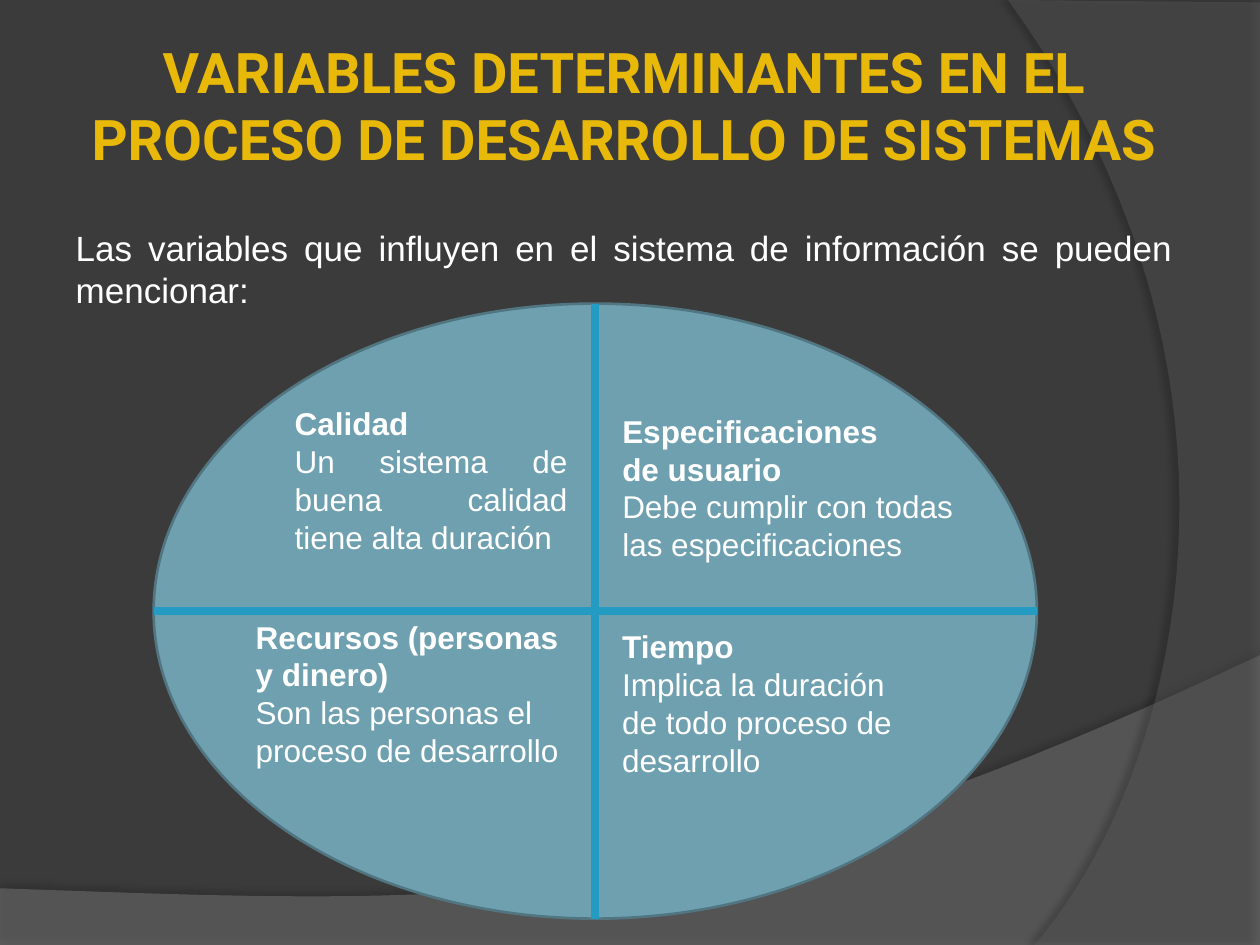
from lxml import etree
from pptx import Presentation
from pptx.dml.color import RGBColor
from pptx.enum.shapes import MSO_CONNECTOR, MSO_SHAPE
from pptx.enum.text import MSO_ANCHOR, MSO_AUTO_SIZE, PP_ALIGN
from pptx.oxml.ns import qn
from pptx.util import Pt

STRAIGHT = MSO_CONNECTOR.STRAIGHT
OVAL = MSO_SHAPE.OVAL
MIDDLE = MSO_ANCHOR.MIDDLE
NO_FIT = MSO_AUTO_SIZE.NONE
LEFT, CENTER, JUSTIFY = PP_ALIGN.LEFT, PP_ALIGN.CENTER, PP_ALIGN.JUSTIFY

WIDTH, HEIGHT = 720, 540
CURVE_STEPS = 40
WHITE = "FFFFFF"
OVAL_LEFT, OVAL_TOP, OVAL_WIDTH, OVAL_HEIGHT = 87.8, 173.5, 504.7, 351.4

QUADRANTS = [
    (161.3, 227.5, 170, 116.6, "Calidad",
     "Un sistema de buena calidad tiene alta duración", JUSTIFY),
    (348.5, 231.8, 209.5, 94.3, "Especificaciones\vde usuario",
     "Debe cumplir con todas las especificaciones", LEFT),
    (139, 349.4, 203.8, 116.6, "Recursos (personas\vy dinero)",
     "Son las personas el proceso de desarrollo", LEFT),
    (348.5, 355, 187.2, 116.6, "Tiempo",
     "Implica la duración de todo proceso de desarrollo", LEFT),
]


def color(value):
    return RGBColor.from_string(value)


def place(shape, left, top, width, height):
    shape.left, shape.top = Pt(left), Pt(top)
    shape.width, shape.height = Pt(width), Pt(height)


def format_runs(para, font, size, value, bold=False):
    for span in para.runs:
        span.font.name = font
        span.font.size = Pt(size)
        span.font.bold = bold
        span.font.color.rgb = color(value)


def add_alpha(color_element, percent):
    etree.SubElement(color_element, qn("a:alpha"), val=str(percent * 1000))


def curve_points(start, control_1, control_2, end):
    points = []
    for step in range(1, CURVE_STEPS + 1):
        t = step / CURVE_STEPS
        weights = ((1 - t) ** 3, 3 * t * (1 - t) ** 2, 3 * t * t * (1 - t), t ** 3)
        anchors = (start, control_1, control_2, end)
        points.append(tuple(sum(w * p[axis] for w, p in zip(weights, anchors))
                            for axis in (0, 1)))
    return points


def add_wave(page, depth, corners, curve, fill, alpha, shadow_alpha, distance, angle):
    outline = [(Pt(x), Pt(y)) for x, y in corners + curve_points(corners[-1], *curve)]
    builder = page.shapes.build_freeform(*outline[0], scale=1.0)
    builder.add_line_segments(outline[1:], close=True)
    wave = builder.convert_to_shape()
    wave.fill.solid()
    wave.fill.fore_color.rgb = color(fill)
    wave.line.fill.background()
    wave.shadow.inherit = False
    properties = wave.element.spPr
    add_alpha(properties.find(qn("a:solidFill")).find(qn("a:srgbClr")), alpha)
    shadow = etree.SubElement(
        properties.find(qn("a:effectLst")), qn("a:outerShdw"), blurRad=str(Pt(4)),
        dist=str(Pt(distance)), dir=str(angle * 60000), algn="ctr", rotWithShape="0")
    add_alpha(etree.SubElement(shadow, qn("a:srgbClr"), val="000000"), shadow_alpha)
    tree = wave.element.getparent()
    tree.insert(2 + depth, wave.element)


def add_title(page, text):
    title = page.shapes.title
    place(title, 36, 15, 641.5, 90)
    frame = title.text_frame
    frame.text = text
    frame.auto_size = NO_FIT
    frame.vertical_anchor = MIDDLE
    frame.margin_left = frame.margin_right = Pt(3.6)
    frame.margin_top = frame.margin_bottom = Pt(3.6)
    para = frame.paragraphs[0]
    para.alignment = CENTER
    format_runs(para, "Roboto", 32, "E9B90A", True)


def add_introduction(page, text):
    body = page.placeholders[1]
    place(body, 36, 126, 641.5, 65)
    frame = body.text_frame
    frame.text = text
    frame.auto_size = NO_FIT
    para = frame.paragraphs[0]
    para.alignment = JUSTIFY
    para.space_before = Pt(4)
    format_runs(para, "Arial", 20, WHITE)
    properties = para._p.get_or_add_pPr()
    properties.set("marL", "0")
    properties.set("indent", "0")
    etree.SubElement(properties, qn("a:buNone"))


def add_oval(group):
    oval = group.shapes.add_shape(OVAL, Pt(OVAL_LEFT), Pt(OVAL_TOP),
                                  Pt(OVAL_WIDTH), Pt(OVAL_HEIGHT))
    oval.shadow.inherit = False
    oval.fill.solid()
    oval.fill.fore_color.rgb = color("6EA0B0")
    oval.line.color.rgb = color("517682")
    oval.line.width = Pt(1.5)


def add_divider(group, *ends):
    divider = group.shapes.add_connector(STRAIGHT, *(Pt(value) for value in ends))
    divider.line.color.rgb = color("239BC2")
    divider.line.width = Pt(4.5)
    etree.SubElement(divider.element.spPr, qn("a:effectLst"))


def add_quadrant(group, left, top, width, height, heading, detail, alignment):
    box = group.shapes.add_textbox(Pt(left), Pt(top), Pt(width), Pt(height))
    frame = box.text_frame
    frame.word_wrap = True
    frame.text = heading
    format_runs(frame.paragraphs[0], "Arial", 18, WHITE, True)
    para = frame.add_paragraph()
    para.text = detail
    para.alignment = alignment
    format_runs(para, "Arial", 18, WHITE)


def main():
    deck = Presentation()
    deck.slide_width, deck.slide_height = Pt(WIDTH), Pt(HEIGHT)
    page = deck.slides.add_slide(deck.slide_layouts[1])
    page.background.fill.solid()
    page.background.fill.fore_color.rgb = color("3B3B3B")

    add_wave(page, 0, [(0, 507.6), (0, HEIGHT), (WIDTH, HEIGHT), (WIDTH, 374.4)],
             [(402.5, 524.9), (281.5, 517.7), (0, 507.6)], "7F7F7F", 45, 35, 3.5, 270)
    add_wave(page, 1, [(WIDTH, 1.4), (WIDTH, HEIGHT), (591.1, HEIGHT)],
             [(673.2, 445.7), (733, 216), (576, 0)], "5E5E5E", 40, 45, 4, 180)

    add_title(page, "VARIABLES DETERMINANTES EN EL PROCESO DE DESARROLLO DE SISTEMAS")
    add_introduction(page, "Las variables que influyen en el sistema de información "
                           "se pueden mencionar:")

    group = page.shapes.add_group_shape()
    add_oval(group)
    center_x, center_y = OVAL_LEFT + OVAL_WIDTH / 2, OVAL_TOP + OVAL_HEIGHT / 2
    add_divider(group, center_x, OVAL_TOP, center_x, OVAL_TOP + OVAL_HEIGHT)
    add_divider(group, OVAL_LEFT, center_y, OVAL_LEFT + OVAL_WIDTH, center_y)
    for quadrant in QUADRANTS:
        add_quadrant(group, *quadrant)

    deck.save("out.pptx")


if __name__ == "__main__":
    main()
